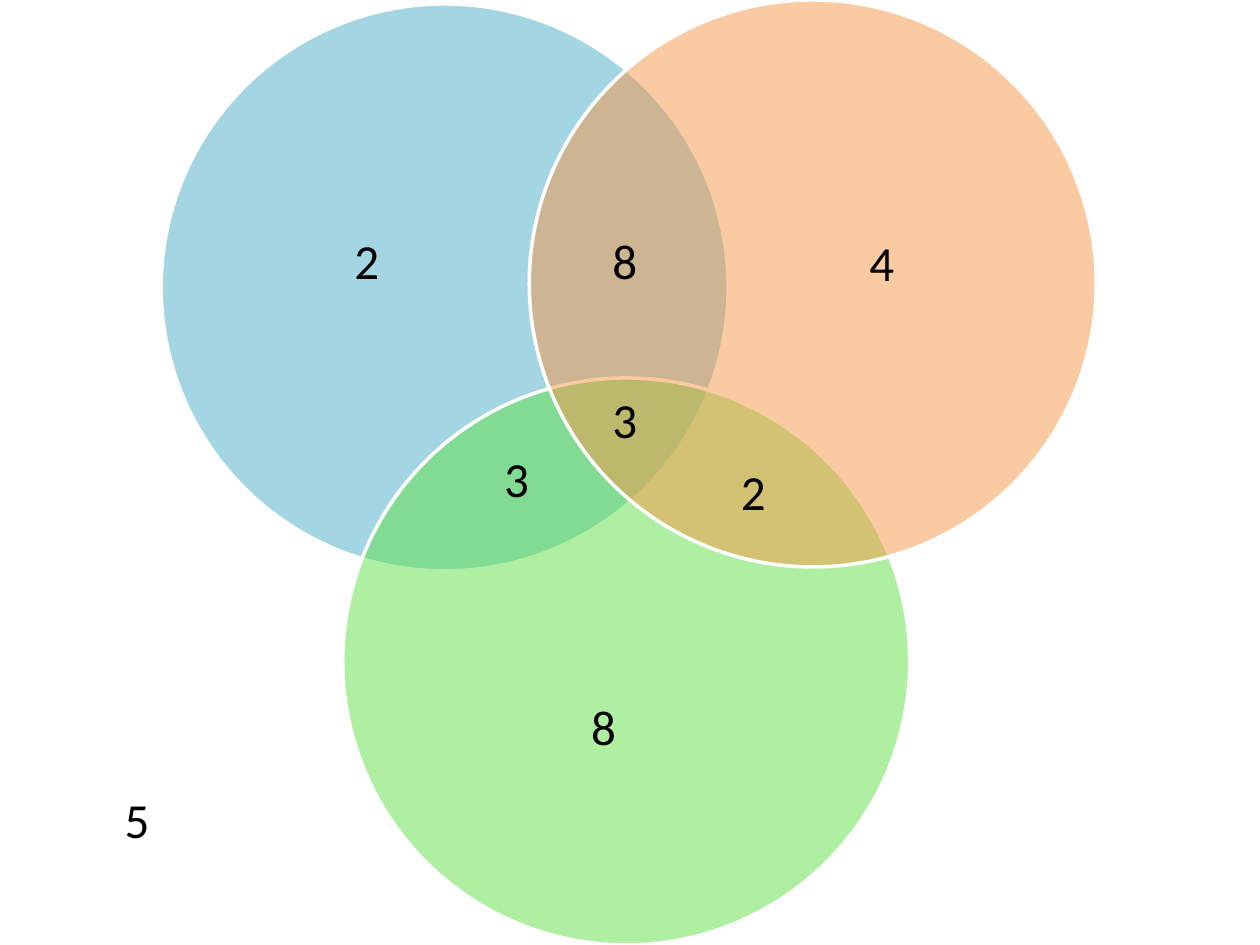
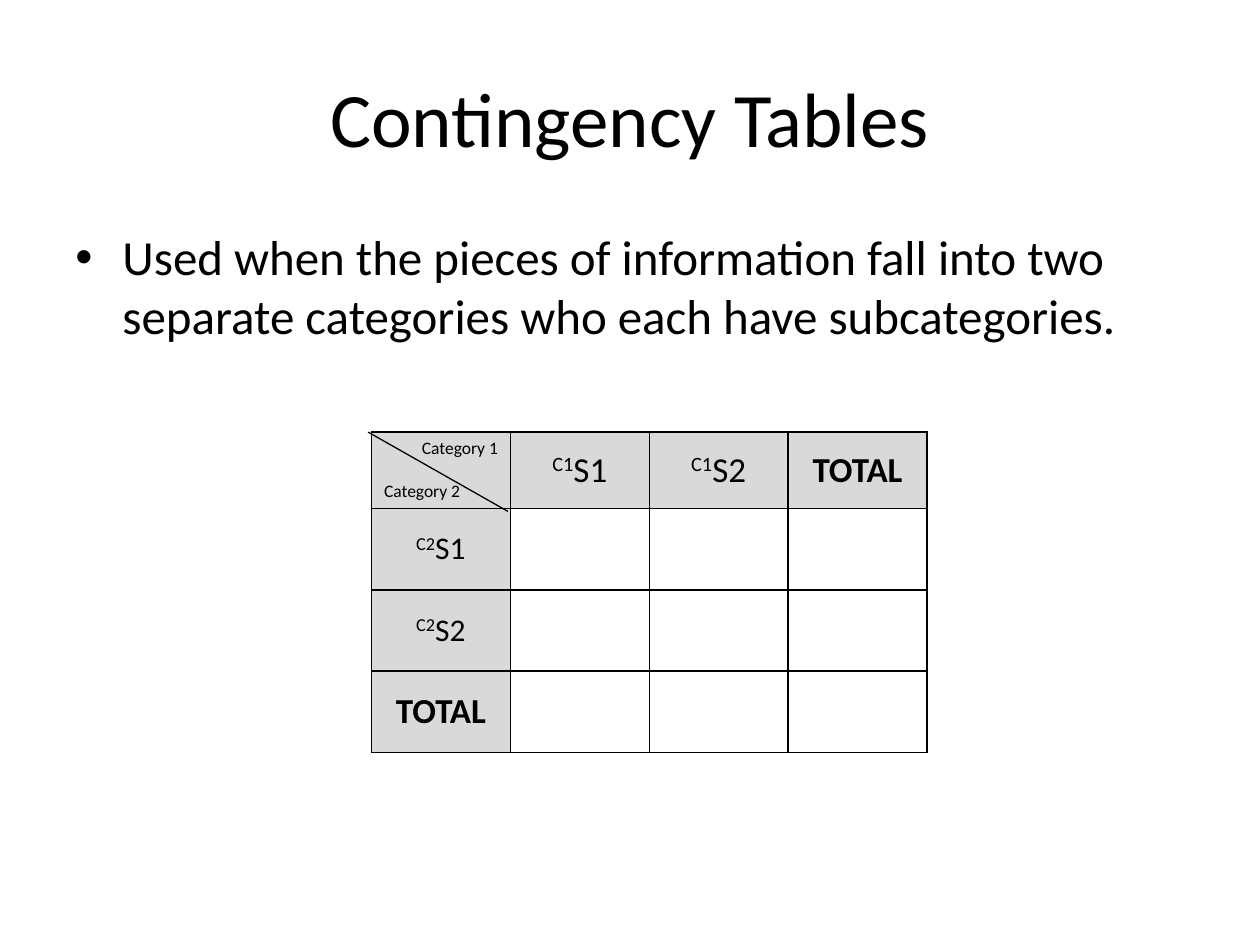
from dataclasses import dataclass
from typing import Any, NamedTuple

from lxml import etree
from pptx import Presentation
from pptx.dml.color import RGBColor
from pptx.enum import shapes, text
from pptx.oxml import ns, parse_xml
from pptx.util import Cm, Pt


@dataclass(frozen=True)
class Theme:
    font: str = "Calibri"
    ink: str = "000000"
    paper: str = "FFFFFF"
    header: str = "D9D9D9"
    blue: str = "4BACC6"
    green: str = "60E146"
    orange: str = "F79646"
    title_size: int = 44
    body_size: int = 28
    head_size: int = 20
    row_size: int = 18
    corner_size: int = 10


class Circle(NamedTuple):
    left: float
    top: float
    color: str


class Label(NamedTuple):
    words: str
    left: float
    top: float


class Heading(NamedTuple):
    words: str
    size: int
    raised: str = ""
    bold: bool = False


THEME = Theme()
CENTER = text.PP_ALIGN.CENTER
DIAMETER = 11.43
LABEL_WIDTH, LABEL_HEIGHT = 2.59, 1.45
COLUMN = 2.8
HEAD_ROW, BODY_ROW = 1.54, 1.64

CIRCLES = [
    Circle(3.25, 0.08, THEME.blue),
    Circle(6.91, 7.62, THEME.green),
    Circle(10.67, 0, THEME.orange),
]
COUNTS = [
    Label("3", 11.3, 7.72),
    Label("2", 13.89, 9.17),
    Label("8", 11.3, 4.52),
    Label("4", 16.48, 4.57),
    Label("2", 6.1, 4.52),
    Label("3", 9.12, 8.92),
    Label("8", 10.87, 13.92),
    Label("5", 1.47, 15.8),
]
COLUMN_HEADS = [
    Heading("S1", THEME.head_size, "C1"),
    Heading("S2", THEME.head_size, "C1"),
    Heading("TOTAL", THEME.head_size, bold=True),
]
ROW_HEADS = [
    Heading("S1", THEME.row_size, "C2"),
    Heading("S2", THEME.row_size, "C2"),
    Heading("TOTAL", THEME.head_size, bold=True),
]


def rgb(color: str) -> RGBColor:
    return RGBColor.from_string(color)


def apply(target: Any, formats: dict[str, Any]) -> None:
    for name, value in formats.items():
        setattr(target, name, value)


def place(sp: Any, left: float, top: float, width: float, height: float) -> None:
    apply(sp, {"left": Cm(left), "top": Cm(top), "width": Cm(width), "height": Cm(height)})


def add_run(p: Any, words: str, size: int, bold: bool = False) -> Any:
    r = p.add_run()
    r.text = words
    apply(r.font, {"name": THEME.font, "size": Pt(size), "bold": bold})
    r.font.color.rgb = rgb(THEME.ink)
    return r


def add_text_box(s: Any, left: float, top: float, width: float, height: float,
                 words: str) -> Any:
    """Add body-size text and return its paragraph."""
    sp = s.shapes.add_textbox(Cm(left), Cm(top), Cm(width), Cm(height))
    sp.text_frame.word_wrap = True
    p = sp.text_frame.paragraphs[0]
    add_run(p, words, THEME.body_size)
    return p


def add_circle(group: Any, circle: Circle) -> None:
    sp = group.shapes.add_shape(shapes.MSO_SHAPE.OVAL, Cm(circle.left), Cm(circle.top),
                                Cm(DIAMETER), Cm(DIAMETER))
    sp.shadow.inherit = False
    sp.fill.solid()
    sp.fill.fore_color.rgb = rgb(circle.color)
    color = sp._element.spPr.find(f"{ns.qn('a:solidFill')}/{ns.qn('a:srgbClr')}")
    etree.SubElement(color, ns.qn("a:alpha"), val="50000")
    sp.line.color.rgb = rgb(THEME.paper)
    sp.line.width = Pt(2)


def add_bullet(p: Any, indent: float) -> None:
    pPr = p._p.get_or_add_pPr()
    pPr.set("marL", str(Cm(indent)))
    pPr.set("indent", str(-Cm(indent)))
    etree.SubElement(pPr, ns.qn("a:buFont"), typeface="Arial")
    etree.SubElement(pPr, ns.qn("a:buChar"), char="•")


def style_cell(cell: Any, shaded: bool) -> None:
    if shaded:
        cell.fill.solid()
        cell.fill.fore_color.rgb = rgb(THEME.header)
    else:
        cell.fill.background()
    tcPr = cell._tc.get_or_add_tcPr()
    for i, side in enumerate("LRTB"):
        tcPr.insert(i, parse_xml(
            f'<a:ln{side} {ns.nsdecls("a")} w="{Pt(1)}"><a:solidFill>'
            f'<a:srgbClr val="{THEME.ink}"/></a:solidFill></a:ln{side}>'))


def write_heading(cell: Any, heading: Heading) -> None:
    cell.vertical_anchor = text.MSO_ANCHOR.MIDDLE
    p = cell.text_frame.paragraphs[0]
    p.alignment = CENTER
    if heading.raised:
        r = add_run(p, heading.raised, heading.size)
        r._r.get_or_add_rPr().set("baseline", "30000")
    add_run(p, heading.words, heading.size, heading.bold)


def write_corner(cell: Any) -> None:
    """Name both categories, one on each side of the diagonal."""
    tf = cell.text_frame
    upper, lower = tf.paragraphs[0], tf.add_paragraph()
    upper.alignment = text.PP_ALIGN.RIGHT
    lower.space_before = Pt(12)
    add_run(upper, "Category 1", THEME.corner_size)
    add_run(lower, "Category 2", THEME.corner_size)


def add_contingency_table(s: Any, left: float, top: float) -> None:
    rows, cols = len(ROW_HEADS) + 1, len(COLUMN_HEADS) + 1
    frame = s.shapes.add_table(rows, cols, Cm(left), Cm(top), Cm(cols * COLUMN),
                               Cm(HEAD_ROW + len(ROW_HEADS) * BODY_ROW))
    table = frame.table
    apply(table, {"first_row": False, "horz_banding": False})
    for column in table.columns:
        column.width = Cm(COLUMN)
    for i, row in enumerate(table.rows):
        row.height = Cm(BODY_ROW if i else HEAD_ROW)
        for j, cell in enumerate(row.cells):
            style_cell(cell, shaded=i == 0 or j == 0)
    write_corner(table.cell(0, 0))
    for j, heading in enumerate(COLUMN_HEADS, 1):
        write_heading(table.cell(0, j), heading)
    for i, heading in enumerate(ROW_HEADS, 1):
        write_heading(table.cell(i, 0), heading)


def add_diagonal(s: Any) -> None:
    line = s.shapes.add_connector(shapes.MSO_CONNECTOR.STRAIGHT,
                                  Cm(10.24), Cm(10.31), Cm(7.42), Cm(8.71))
    line.line.color.rgb = rgb(THEME.ink)
    line.line.width = Pt(0.75)
    etree.SubElement(line._element.spPr, ns.qn("a:effectLst"))


def build_venn(prs: Any) -> None:
    s = prs.slides.add_slide(prs.slide_layouts.get_by_name("Blank"))
    group = s.shapes.add_group_shape()
    for circle in CIRCLES:
        add_circle(group, circle)
    for count in COUNTS:
        p = add_text_box(s, count.left, count.top, LABEL_WIDTH, LABEL_HEIGHT, count.words)
        p.alignment = CENTER


def build_contingency(prs: Any) -> None:
    s = prs.slides.add_slide(prs.slide_layouts.get_by_name("Title Only"))
    title = s.shapes.title
    place(title, 1.27, 0.76, 22.86, 3.18)
    title.text_frame.vertical_anchor = text.MSO_ANCHOR.MIDDLE
    p = title.text_frame.paragraphs[0]
    p.alignment = CENTER
    add_run(p, "Contingency Tables", THEME.title_size)
    p = add_text_box(s, 1.27, 4.45, 22.23, 4.67,
                     "Used when the pieces of information fall into two separate "
                     "categories who each have subcategories.")
    add_bullet(p, 0.95)
    add_contingency_table(s, 7.49, 8.71)
    add_diagonal(s)


def main() -> None:
    prs = Presentation()
    apply(prs, {"slide_width": Cm(25.4), "slide_height": Cm(19.05)})
    build_venn(prs)
    build_contingency(prs)
    prs.save("out.pptx")


if __name__ == "__main__":
    main()
